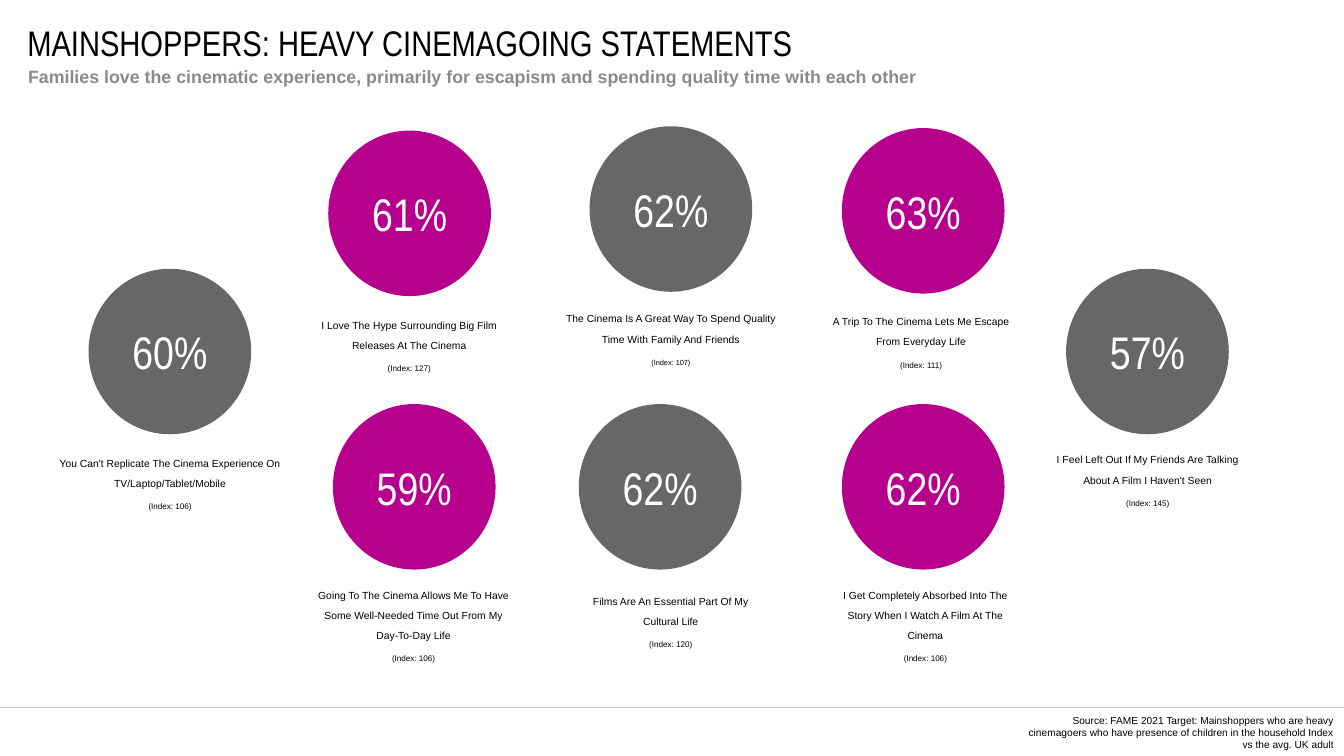
from typing import NamedTuple

import pptx
import pptx.dml.color
import pptx.enum.shapes
import pptx.enum.text
import pptx.util
from lxml import etree

Cm = pptx.util.Cm
Pt = pptx.util.Pt
RGBColor = pptx.dml.color.RGBColor
PP_ALIGN = pptx.enum.text.PP_ALIGN
MSO_ANCHOR = pptx.enum.text.MSO_ANCHOR

MAGENTA = RGBColor(0xB6, 0x00, 0x8D)
DARK_GREY = RGBColor(0x67, 0x67, 0x6A)
SUBTITLE_GREY = RGBColor(0x8A, 0x8A, 0x8D)
RULE_GREY = RGBColor(0xCA, 0xC8, 0xC8)
BLACK = RGBColor(0x00, 0x00, 0x00)
WHITE = RGBColor(0xFF, 0xFF, 0xFF)

SLIDE_WIDTH, SLIDE_HEIGHT = 37.34, 21.01
CIRCLE_WIDTH, CIRCLE_HEIGHT = 4.52, 4.6
CAPTION_HEIGHT = 2.44


class Box(NamedTuple):
    """Left, top, width and height in centimetres."""
    left: float
    top: float
    width: float
    height: float

    def lengths(self) -> list[int]:
        return [Cm(value) for value in self]


class Style(NamedTuple):
    size: float
    color: RGBColor = BLACK
    font: str = "Arial"
    bold: bool = False
    superscript: bool = False


class Statement(NamedTuple):
    share: int
    index: int
    text: str
    color: RGBColor
    circle_left: float
    circle_top: float
    caption_left: float
    caption_top: float
    caption_width: float
    index_size: float = 11


TITLE = Style(28, font="Arial Narrow")
SUBTITLE = Style(14, SUBTITLE_GREY, bold=True)
SOURCE = Style(8)
SHARE = Style(36, WHITE, "Arial Narrow")
CAPTION = Style(14, superscript=True)

STATEMENTS = [
    # Top row
    Statement(61, 127, "I Love The Hype Surrounding Big Film Releases At The Cinema",
              MAGENTA, 9.12, 3.63, 8.13, 8.71, 6.48),
    Statement(62, 107, "The Cinema Is A Great Way To Spend Quality Time With Family And Friends",
              DARK_GREY, 16.38, 3.51, 15.21, 8.53, 6.86, index_size=10),
    Statement(63, 111, "A Trip To The Cinema Lets Me Escape From Everyday Life",
              MAGENTA, 23.39, 3.56, 22.58, 8.61, 6.02),
    # Outer sides
    Statement(60, 106, "You Can't Replicate The Cinema Experience On TV/Laptop/Tablet/Mobile",
              DARK_GREY, 2.46, 7.47, 1.22, 12.55, 7.01),
    Statement(57, 145, "I Feel Left Out If My Friends Are Talking About A Film I Haven't Seen",
              DARK_GREY, 29.62, 7.47, 28.85, 12.45, 6.07),
    # Bottom row
    Statement(59, 106, "Going To The Cinema Allows Me To Have Some Well-Needed Time Out "
              "From My Day-To-Day Life",
              MAGENTA, 9.25, 11.23, 8.43, 16.21, 6.12),
    Statement(62, 120, "Films Are An Essential Part Of My Cultural Life",
              DARK_GREY, 16.08, 11.23, 15.88, 16.38, 5.51),
    Statement(62, 106, "I Get Completely Absorbed Into The Story When I Watch A Film At The Cinema",
              MAGENTA, 23.39, 11.23, 22.94, 16.21, 5.54),
]


def add_text(paragraph, text: str, style: Style, align=PP_ALIGN.LEFT) -> None:
    paragraph.alignment = align
    run = paragraph.add_run()
    run.text = text
    run.font.name = style.font
    run.font.size = Pt(style.size)
    run.font.bold = style.bold
    run.font.color.rgb = style.color
    if style.superscript:
        run._r.get_or_add_rPr().set("baseline", "30000")


def center_without_insets(frame) -> None:
    frame.margin_left = frame.margin_right = frame.margin_top = frame.margin_bottom = 0
    frame.vertical_anchor = MSO_ANCHOR.MIDDLE


def add_frame(slide, box: Box):
    frame = slide.shapes.add_textbox(*box.lengths()).text_frame
    frame.word_wrap = True
    return frame


def add_rule(slide, top: float) -> None:
    rule = slide.shapes.add_connector(pptx.enum.shapes.MSO_CONNECTOR.STRAIGHT,
                                      Cm(0), Cm(top), Cm(SLIDE_WIDTH), Cm(top))
    rule.line.color.rgb = RULE_GREY
    rule.line.width = Pt(0.5)
    etree.SubElement(rule._element.spPr, pptx.oxml.ns.qn("a:effectLst"))


def add_statement(slide, item: Statement) -> None:
    # Circle with the share
    place = Box(item.circle_left, item.circle_top, CIRCLE_WIDTH, CIRCLE_HEIGHT)
    circle = slide.shapes.add_shape(pptx.enum.shapes.MSO_SHAPE.OVAL, *place.lengths())
    circle.shadow.inherit = False
    circle.fill.solid()
    circle.fill.fore_color.rgb = item.color
    circle.line.fill.background()
    center_without_insets(circle.text_frame)
    add_text(circle.text_frame.paragraphs[0], f"{item.share}%", SHARE, PP_ALIGN.CENTER)

    # Caption with the index
    caption = add_frame(slide, Box(item.caption_left, item.caption_top,
                                   item.caption_width, CAPTION_HEIGHT))
    add_text(caption.paragraphs[0], item.text, CAPTION, PP_ALIGN.CENTER)
    add_text(caption.add_paragraph(), f"(Index: {item.index})",
             CAPTION._replace(size=item.index_size), PP_ALIGN.CENTER)
    for paragraph in caption.paragraphs:
        paragraph.line_spacing = Pt(16)


def main() -> None:
    presentation = pptx.Presentation()
    presentation.slide_width = Cm(SLIDE_WIDTH)
    presentation.slide_height = Cm(SLIDE_HEIGHT)
    slide = presentation.slides.add_slide(presentation.slide_layouts[6])

    # Heading
    title = add_frame(slide, Box(0.76, 0.76, 34.5, 0.81))
    center_without_insets(title)
    add_text(title.paragraphs[0], "MAINSHOPPERS: HEAVY CINEMAGOING STATEMENTS", TITLE)
    subtitle = add_frame(slide, Box(0.53, 1.7, 32.72, 1.22))
    add_text(subtitle.paragraphs[0], "Families love the cinematic experience, primarily for "
             "escapism and spending quality time with each other", SUBTITLE)

    # Statements
    for item in STATEMENTS:
        add_statement(slide, item)

    # Footer
    add_rule(slide, 19.65)
    source = add_frame(slide, Box(28.22, 19.84, 8.84, 1.02))
    center_without_insets(source)
    add_text(source.paragraphs[0], "Source: FAME 2021 Target: Mainshoppers who are heavy "
             "cinemagoers who have presence of children in the household Index vs the avg. "
             "UK adult", SOURCE, PP_ALIGN.RIGHT)

    presentation.save("out.pptx")


if __name__ == "__main__":
    main()
